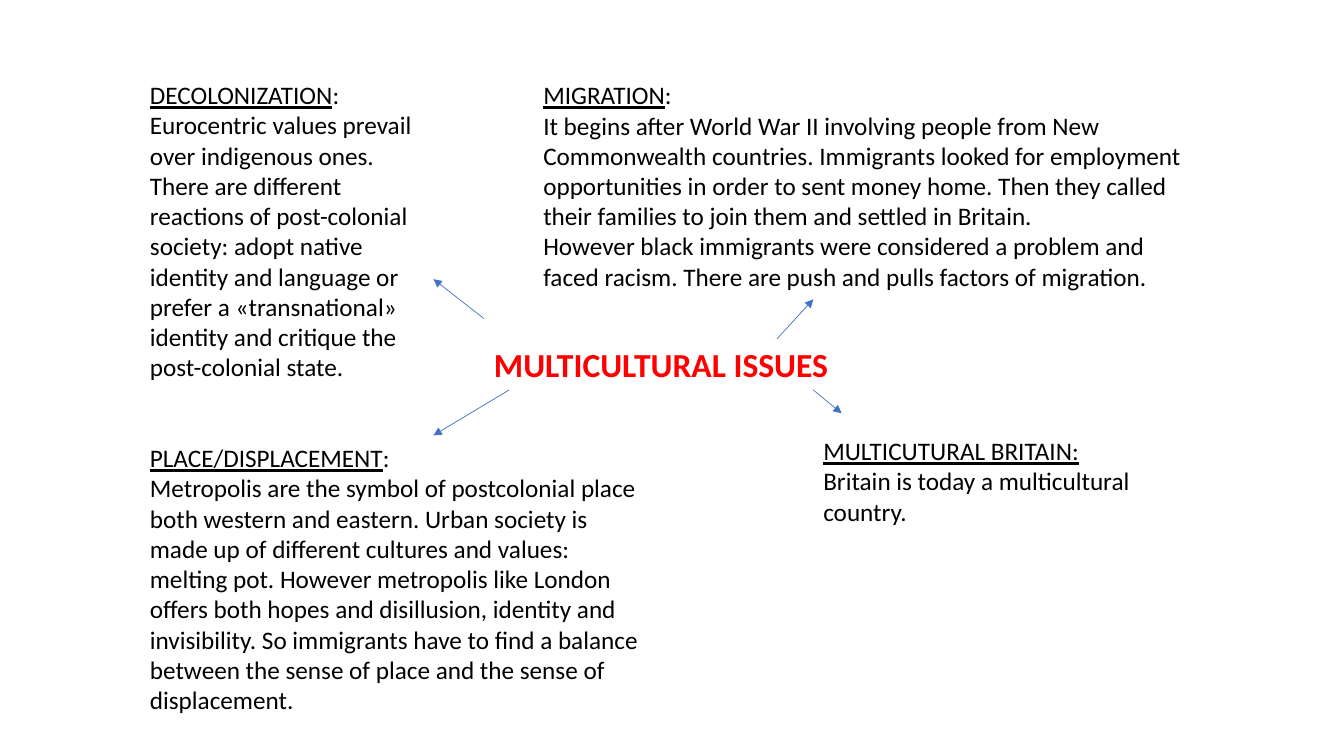
from lxml import etree
from pptx import Presentation
from pptx.dml.color import RGBColor
from pptx.enum.shapes import MSO_CONNECTOR
from pptx.enum.text import MSO_ANCHOR, MSO_AUTO_SIZE, PP_ALIGN
from pptx.oxml.ns import qn
from pptx.util import Pt

STRAIGHT = MSO_CONNECTOR.STRAIGHT
TOP = MSO_ANCHOR.TOP
NO_AUTOFIT = MSO_AUTO_SIZE.NONE
LEFT = PP_ALIGN.LEFT
TITLE_ONLY = 5


def rgb(value):
    return RGBColor.from_string(value)


def add_text(p, text, size=18, color="000000", bold=False, underline=False):
    r = p.add_run()
    r.text = text
    r.font.name = "Calibri"
    r.font.size = Pt(size)
    r.font.bold = bold
    r.font.underline = underline
    r.font.color.rgb = rgb(color)


class MindMap:
    ACCENT = "4472C4"
    TITLE_COLOR = "FF0000"

    def __init__(self, prs):
        self.s = prs.slides.add_slide(prs.slide_layouts[TITLE_ONLY])

    def frame(self, sp):
        tf = sp.text_frame
        tf.word_wrap = True
        tf.auto_size = NO_AUTOFIT
        tf.vertical_anchor = TOP
        return tf

    def title(self, text, x, y, w, h):
        sp = self.s.shapes.title
        sp.left, sp.top, sp.width, sp.height = Pt(x), Pt(y), Pt(w), Pt(h)
        p = self.frame(sp).paragraphs[0]
        p.alignment = LEFT
        add_text(p, text, size=24, color=self.TITLE_COLOR, bold=True)

    def topic(self, heading, mark, paragraphs, x, y, w, h):
        sp = self.s.shapes.add_textbox(Pt(x), Pt(y), Pt(w), Pt(h))
        tf = self.frame(sp)
        p = tf.paragraphs[0]
        add_text(p, heading, underline=True)
        if mark:
            add_text(p, mark)
        for text in paragraphs:
            add_text(tf.add_paragraph(), text)

    def arrow(self, x1, y1, x2, y2):
        sp = self.s.shapes.add_connector(STRAIGHT, Pt(x1), Pt(y1), Pt(x2), Pt(y2))
        sp.line.color.rgb = rgb(self.ACCENT)
        sp.line.width = Pt(0.5)
        ln = sp.line._get_or_add_ln()
        etree.SubElement(ln, qn("a:tailEnd"), type="triangle")
        etree.SubElement(sp._element.spPr, qn("a:effectLst"))


# Heading, mark after it, paragraphs, box (left, top, width, height)
TOPICS = [
    ("DECOLONIZATION", ":", [
        "Eurocentric values prevail over indigenous ones.",
        "There are different reactions of post-colonial society: adopt native "
        "identity and language or prefer a «transnational» identity and "
        "critique the post-colonial state.",
    ], (100, 53.3, 209.5, 225.4)),
    ("MIGRATION", ":", [
        "It begins after World War II involving people from New Commonwealth "
        "countries. Immigrants looked for employment opportunities in order to "
        "sent money home. Then they called their families to join them and "
        "settled in Britain.",
        "However black immigrants were considered a problem and faced racism. "
        "There are push and pulls factors of migration.",
    ], (381, 53.3, 486.7, 159.8)),
    ("PLACE/DISPLACEMENT", ":", [
        "Metropolis are the symbol of postcolonial place both western and "
        "eastern. Urban society is made up of different cultures and values: "
        "melting pot. However metropolis like London offers both hopes and "
        "disillusion, identity and invisibility. So immigrants have to find a "
        "balance between the sense of place and the sense of displacement.",
    ], (100, 312.5, 364.3, 203.8)),
    ("MULTICUTURAL BRITAIN:", "", [
        "Britain is today a multicultural country.",
    ], (581, 307.5, 286.6, 72.7)),
]

# Start and end of each arrow, from the title outwards
ARROWS = [
    (345.6, 227.5, 309.6, 199.4),
    (555, 242, 581, 213.8),
    (363.6, 278.6, 309.6, 311),
    (581, 278.6, 601.2, 295.2),
]


def main():
    prs = Presentation()
    prs.slide_width, prs.slide_height = Pt(960), Pt(540)
    mind_map = MindMap(prs)

    # Central theme
    mind_map.title("MULTICULTURAL ISSUES", 345.6, 242, 269.3, 36)

    # Surrounding topics
    for heading, mark, paragraphs, box in TOPICS:
        mind_map.topic(heading, mark, paragraphs, *box)

    # Links from the theme to the topics
    for ends in ARROWS:
        mind_map.arrow(*ends)

    prs.save("out.pptx")


if __name__ == "__main__":
    main()
